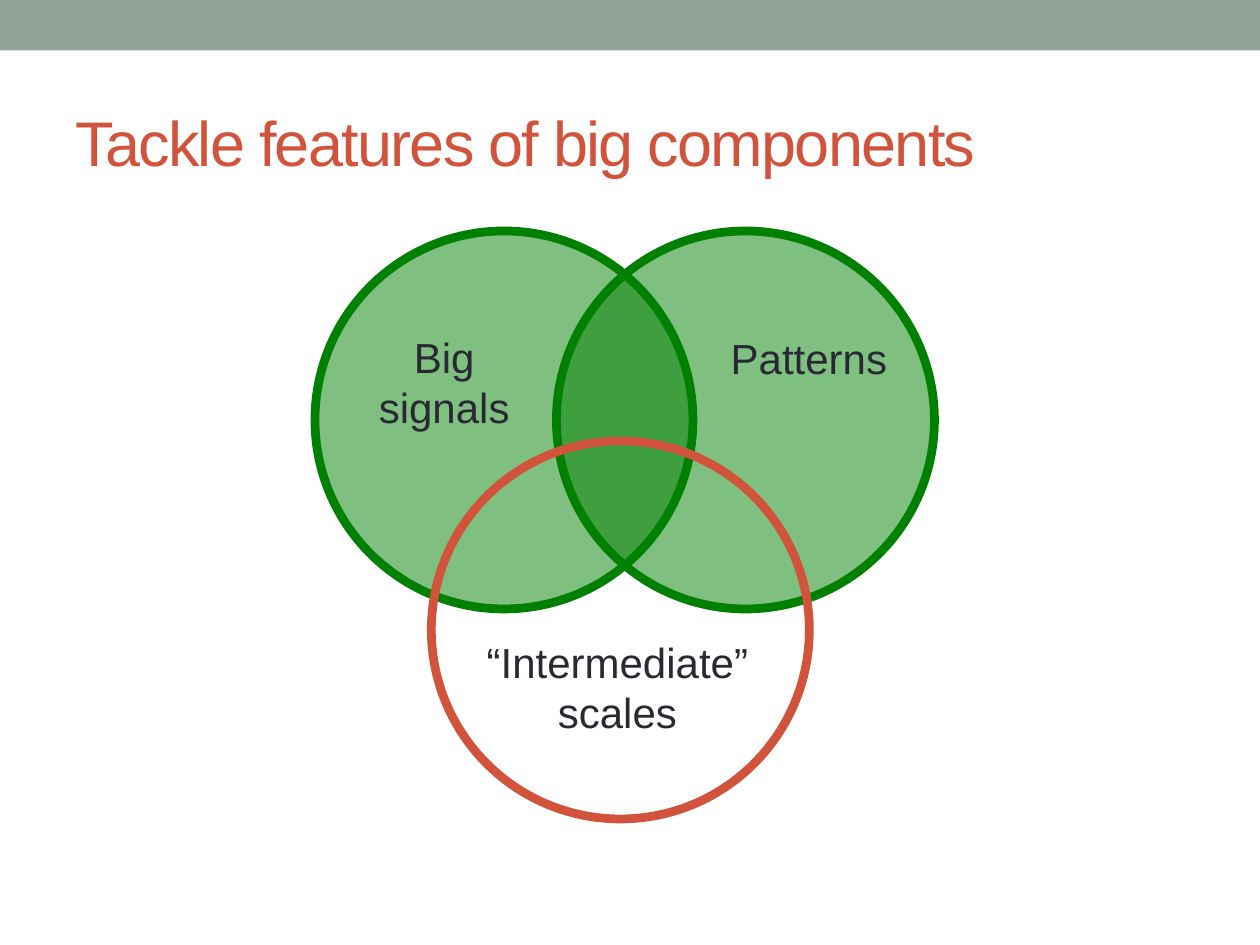
from dataclasses import dataclass
from typing import Optional

import pptx
import pptx.dml.color
import pptx.enum.shapes
import pptx.enum.text
import pptx.oxml.ns
import pptx.slide
import pptx.util
from lxml import etree

Pt = pptx.util.Pt
RGBColor = pptx.dml.color.RGBColor
MSO_SHAPE = pptx.enum.shapes.MSO_SHAPE
MSO_ANCHOR = pptx.enum.text.MSO_ANCHOR
PP_ALIGN = pptx.enum.text.PP_ALIGN
qn = pptx.oxml.ns.qn

SAGE = RGBColor(0x93, 0xA2, 0x99)
BRICK = RGBColor(0xD2, 0x53, 0x3C)
GREEN = RGBColor(0x00, 0x80, 0x00)
INK = RGBColor(0x29, 0x29, 0x34)

FONT = "Arial"
SLIDE_WIDTH = 720
SLIDE_HEIGHT = 540
DIAMETER = 216
OUTLINE = 5
OPACITY = 50


@dataclass(frozen=True)
class Circle:
    left: float
    top: float
    line: RGBColor
    fill: Optional[RGBColor] = None


@dataclass(frozen=True)
class Label:
    text: str
    left: float
    top: float
    width: float
    height: float
    size: float = 24
    color: RGBColor = INK
    align: PP_ALIGN = PP_ALIGN.CENTER
    anchor: MSO_ANCHOR = MSO_ANCHOR.TOP
    wrap: bool = False
    spacing: float = 0


CIRCLES = (
    Circle(180, 132, GREEN, GREEN),
    Circle(318, 132, GREEN, GREEN),
    Circle(246.5, 252, BRICK),
)

TITLE = Label(
    "Tackle features of big components", 36, 42, 648, 78, 36, BRICK,
    PP_ALIGN.LEFT, MSO_ANCHOR.MIDDLE, True, -1,
)

LABELS = (
    TITLE,
    Label("Big\nsignals", 208.8, 185.8, 90, 65.5),
    Label("“Intermediate”\nscales", 270, 360, 165.6, 65.5),
    Label("Patterns", 409.7, 186.5, 105.1, 36),
)


def add_band(slide: pptx.slide.Slide) -> None:
    shape = slide.shapes.add_shape(
        MSO_SHAPE.RECTANGLE, Pt(0), Pt(0), Pt(SLIDE_WIDTH), Pt(28.8)
    )
    shape.shadow.inherit = False
    shape.fill.solid()
    shape.fill.fore_color.rgb = SAGE
    shape.line.fill.background()


def add_circle(slide: pptx.slide.Slide, circle: Circle) -> None:
    shape = slide.shapes.add_shape(
        MSO_SHAPE.OVAL, Pt(circle.left), Pt(circle.top), Pt(DIAMETER), Pt(DIAMETER)
    )
    shape.shadow.inherit = False
    shape.line.color.rgb = circle.line
    shape.line.width = Pt(OUTLINE)
    if circle.fill is None:
        shape.fill.background()
        return
    shape.fill.solid()
    shape.fill.fore_color.rgb = circle.fill
    color = shape.fill._xPr.find(qn("a:solidFill")).find(qn("a:srgbClr"))
    etree.SubElement(color, qn("a:alpha")).set("val", str(OPACITY * 1000))


def add_label(slide: pptx.slide.Slide, label: Label) -> None:
    shape = slide.shapes.add_textbox(
        Pt(label.left), Pt(label.top), Pt(label.width), Pt(label.height)
    )
    text_frame = shape.text_frame
    text_frame.word_wrap = label.wrap
    text_frame.vertical_anchor = label.anchor
    text_frame.text = label.text
    for paragraph in text_frame.paragraphs:
        paragraph.alignment = label.align
        for run in paragraph.runs:
            run.font.name = FONT
            run.font.size = Pt(label.size)
            run.font.color.rgb = label.color
            if label.spacing:
                run.font._element.set("spc", str(round(label.spacing * 100)))


def main() -> None:
    presentation = pptx.Presentation()
    presentation.slide_width = Pt(SLIDE_WIDTH)
    presentation.slide_height = Pt(SLIDE_HEIGHT)
    slide = presentation.slides.add_slide(presentation.slide_layouts[6])
    add_band(slide)
    for circle in CIRCLES:
        add_circle(slide, circle)
    for label in LABELS:
        add_label(slide, label)
    presentation.save("out.pptx")


if __name__ == "__main__":
    main()
